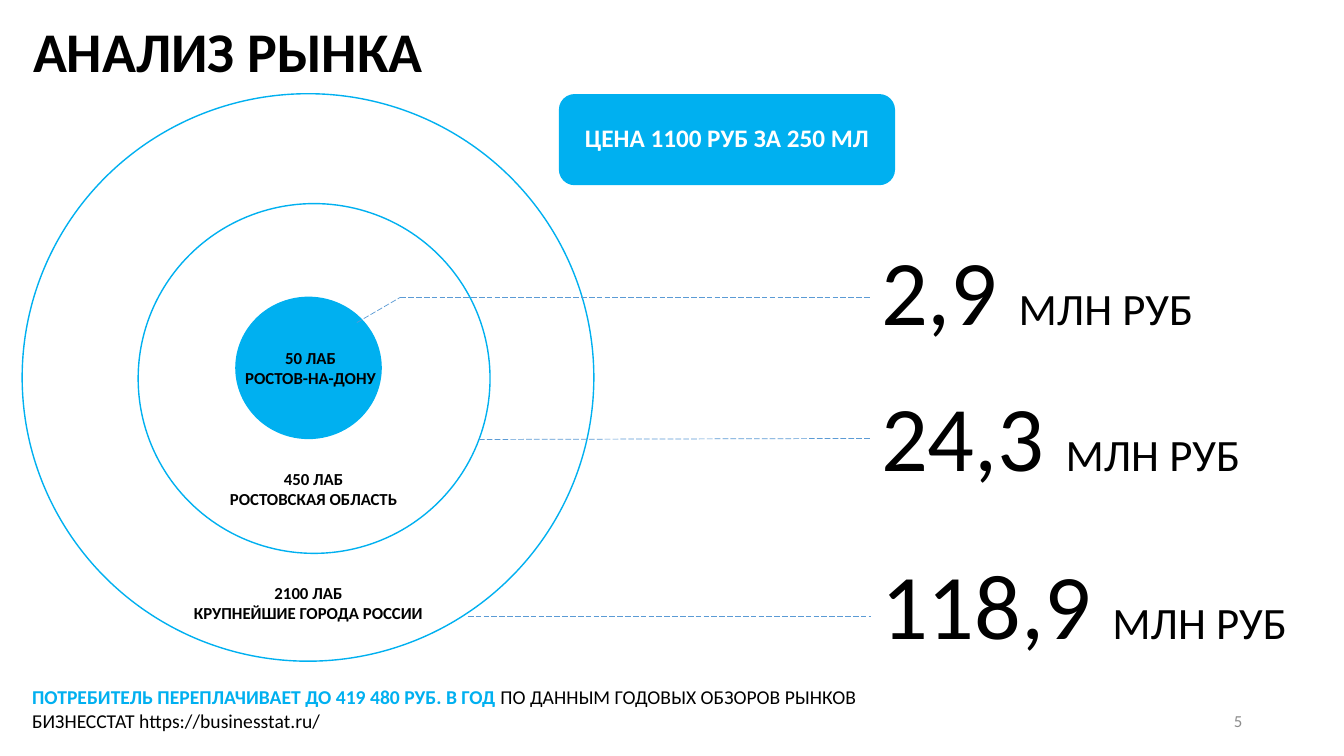
"""Market analysis slide: nested market circles with the revenue of each."""
from pptx import Presentation
from pptx.dml.color import RGBColor
from pptx.enum.dml import MSO_LINE
from pptx.enum.shapes import MSO_CONNECTOR, MSO_SHAPE
from pptx.enum.text import MSO_ANCHOR as ANCHOR, PP_ALIGN as ALIGN
from pptx.oxml.ns import qn
from pptx.util import Inches, Pt

BLACK, WHITE, SKY, STEEL, GRAY = "000000", "FFFFFF", "00B0F0", "5B9BD5", "8C8C8C"


def rgb(code):
    return RGBColor.from_string(code)


def write(frame, paragraphs, size, color=BLACK, bold=False, align=ALIGN.LEFT,
          anchor=ANCHOR.TOP, wrap=True):
    frame.word_wrap = wrap
    frame.vertical_anchor = anchor
    for index, words in enumerate(paragraphs):
        line = frame.add_paragraph() if index else frame.paragraphs[0]
        line.alignment = align
        line.font.name = "Calibri"
        line.font.size = Pt(size)
        line.font.bold = bold
        line.font.color.rgb = rgb(color)
        line.add_run().text = words
    return line


prs = Presentation()
prs.slide_width, prs.slide_height = Inches(13.33), Inches(7.5)
slide = prs.slides.add_slide(prs.slide_layouts[6])
shapes = slide.shapes

title = shapes.add_textbox(Inches(0.23), Inches(-0.19), Inches(12.88), Inches(1.45))
heading = write(title.text_frame, ["АНАЛИЗ РЫНКА"], 40, bold=True, anchor=ANCHOR.MIDDLE)
heading.line_spacing = 0.9

markets = [
    (MSO_SHAPE.OVAL, 2.34, 2.95, 1.44, 1.4, True),
    (MSO_SHAPE.OVAL, 1.37, 2.02, 3.49, 3.47, False),
    (MSO_SHAPE.OVAL, 0.22, 0.93, 5.67, 5.63, False),
    (MSO_SHAPE.ROUNDED_RECTANGLE, 5.55, 0.94, 3.32, 0.89, True),
]
for kind, left, top, width, height, filled in markets:
    figure = shapes.add_shape(kind, Inches(left), Inches(top), Inches(width), Inches(height))
    figure.shadow.inherit = False
    figure.line.color.rgb = rgb(SKY)
    figure.line.width = Pt(1)
    if filled:
        figure.fill.solid()
        figure.fill.fore_color.rgb = rgb(SKY)
    else:
        figure.fill.background()

price = figure
price_line = write(price.text_frame, ["ЦЕНА 1100 РУБ ЗА 250 МЛ"], 18, WHITE, True,
                   ALIGN.CENTER, ANCHOR.MIDDLE)
price_line.line_spacing = 0.9

leaders = [
    (3.54, 3.2, 3.97, 2.95),
    (3.97, 2.95, 8.64, 2.95),
    (4.75, 4.36, 8.64, 4.35),
    (4.64, 6.11, 8.64, 6.11),
]
for x1, y1, x2, y2 in leaders:
    leader = shapes.add_connector(MSO_CONNECTOR.STRAIGHT, Inches(x1), Inches(y1),
                                  Inches(x2), Inches(y2))
    leader.line.color.rgb = rgb(STEEL)
    leader.line.width = Pt(0.5)
    leader.line.dash_style = MSO_LINE.LONG_DASH
    properties = leader._element.spPr
    properties.append(properties.makeelement(qn("a:effectLst"), {}))

regions = [
    (2.32, 3.4, 1.52, ["50 ЛАБ", "РОСТОВ-НА-ДОНУ"]),
    (2.17, 4.6, 1.88, ["450 ЛАБ", "РОСТОВСКАЯ ОБЛАСТЬ"]),
    (1.81, 5.73, 2.5, ["2100 ЛАБ", "КРУПНЕЙШИЕ ГОРОДА РОССИИ"]),
]
for left, top, width, label in regions:
    region = shapes.add_textbox(Inches(left), Inches(top), Inches(width), Inches(0.5))
    write(region.text_frame, label, 12, bold=True, align=ALIGN.CENTER, wrap=False)

revenues = [(2.26, 4, "2,9 "), (3.71, 4.48, "24,3 "), (5.38, 4.7, "118,9 ")]
for top, width, amount in revenues:
    revenue = shapes.add_textbox(Inches(8.64), Inches(top), Inches(width), Inches(1.21))
    unit = write(revenue.text_frame, [amount], 66).add_run()
    unit.text = "МЛН РУБ"
    unit.font.size = Pt(32)

footnote = shapes.add_textbox(Inches(0.22), Inches(6.75), Inches(8.53), Inches(0.57))
overpayment = write(footnote.text_frame,
                    ["ПОТРЕБИТЕЛЬ ПЕРЕПЛАЧИВАЕТ ДО 419 480 РУБ. В ГОД "], 14, SKY, True)
source = overpayment.add_run()
source.text = "ПО ДАННЫМ ГОДОВЫХ ОБЗОРОВ РЫНКОВ БИЗНЕССТАТ https://businesstat.ru/"
source.font.bold = False
source.font.color.rgb = rgb(BLACK)

page = shapes.add_textbox(Inches(9.42), Inches(6.95), Inches(3), Inches(0.4))
write(page.text_frame, ["5"], 12, GRAY, align=ALIGN.RIGHT, anchor=ANCHOR.MIDDLE)

prs.save("out.pptx")
